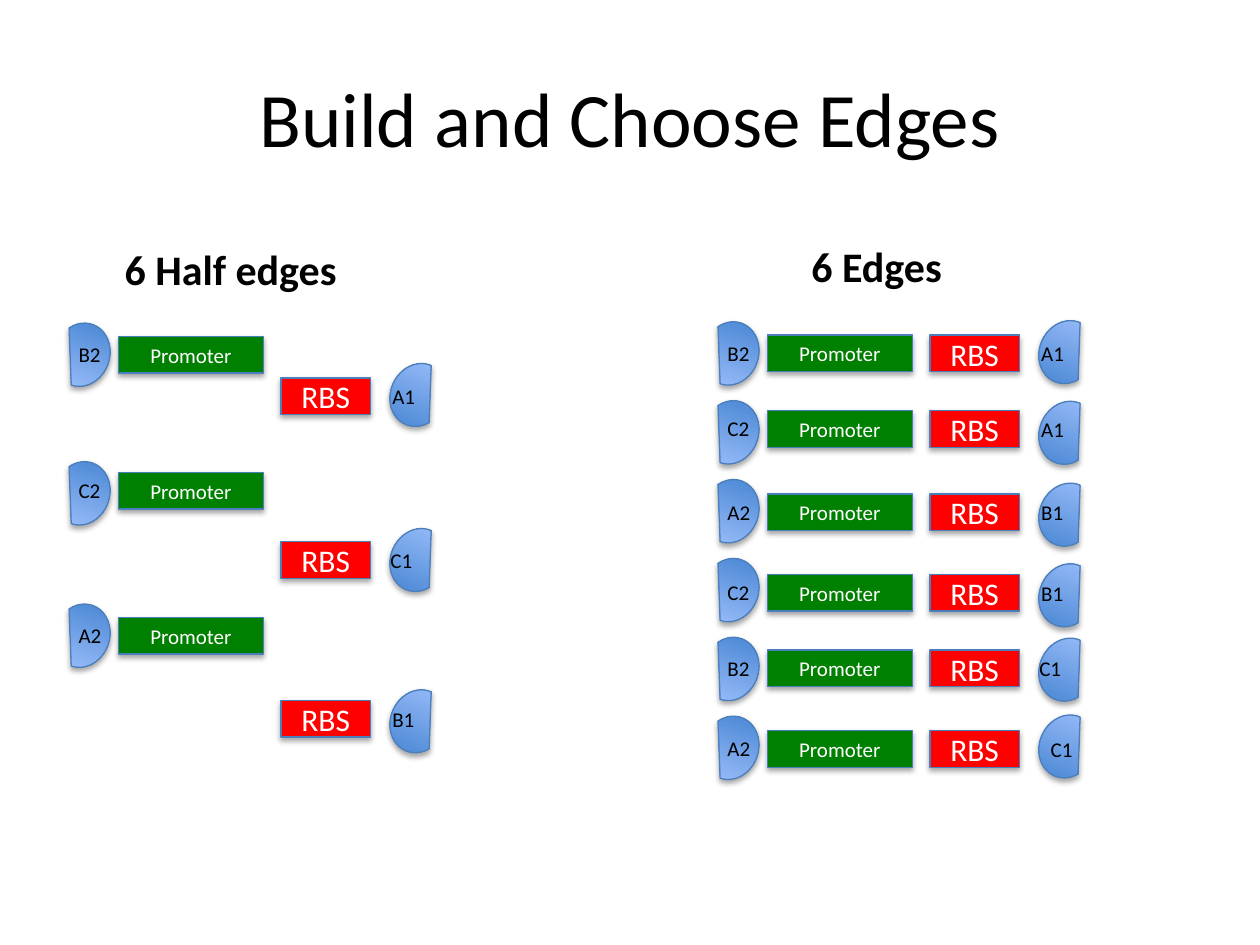
from dataclasses import dataclass

from lxml.etree import SubElement
from pptx import Presentation
from pptx.dml.color import RGBColor
from pptx.enum.shapes import MSO_SHAPE
from pptx.enum.text import MSO_ANCHOR, PP_ALIGN
from pptx.oxml.ns import qn
from pptx.util import Inches, Pt

# Grid: 100 columns by 75 rows; all positions and sizes are in these cells
SLIDE_W, SLIDE_H = Inches(10), Inches(7.5)
COL, ROW = SLIDE_W / 100, SLIDE_H / 75


@dataclass(frozen=True)
class Theme:
    font: str = "Calibri"
    text: str = "000000"
    on_fill: str = "FFFFFF"
    promoter: str = "008000"
    rbs: str = "FF0000"
    outline: str = "4B7EBC"
    gradient: tuple = ("3F80CE", "A4C4FF")
    title_size: int = 44
    heading_size: int = 24
    rbs_size: int = 18
    label_size: int = 12


THEME = Theme()

# Columns measured from the left end of an edge
LEFT_END, LEFT_LABEL, PROMOTER = 0, 0.95, 5.1
RBS, RIGHT_LABEL, RIGHT_END = 18, 25.85, 26.7
END_W, END_H, BOX_H, LABEL_H = 4.4, 5.1, 2.9, 3

HALVES_X, EDGES_X = 4.3, 55.8
FIRST_END, END_PITCH = 25.5, 6.26

# Left label, right label, box row, right end row, shift of right label
EDGES = [
    ("B2", "A1", 26.6, 25.4, 0),
    ("C2", "A1", 32.6, 31.8, 0),
    ("A2", "B1", 39.2, 38.3, 0),
    ("C2", "B1", 45.6, 44.7, 0),
    ("B2", "C1", 51.6, 50.6, -0.15),
    ("A2", "C1", 58, 56.7, 0.75),
]
# Label, box row, end row
LEFT_HALVES = [("B2", 26.7, 25.6), ("C2", 37.5, 36.6), ("A2", 49, 47.9)]
# Label, box row, end row, shift of label
RIGHT_HALVES = [("A1", 30, 28.8, 0), ("C1", 43, 41.9, -0.15),
                ("B1", 55.6, 54.7, 0)]


def cells(x, y, w, h):
    return [round(v) for v in (x * COL, y * ROW, w * COL, h * ROW)]


def apply_format(obj, values):
    for name, value in values.items():
        setattr(obj, name, value)


def write(sp, text, size, color, align=PP_ALIGN.LEFT,
          anchor=MSO_ANCHOR.TOP, bold=False):
    tf = sp.text_frame
    apply_format(tf, {"word_wrap": True, "vertical_anchor": anchor})
    p = tf.paragraphs[0]
    p.alignment = align
    r = p.add_run()
    r.text = text
    apply_format(r.font, {"name": THEME.font, "size": Pt(size), "bold": bold})
    r.font.color.rgb = RGBColor.from_string(color)


def add_text(shapes, box, text, size, **layout):
    write(shapes.add_textbox(*cells(*box)), text, size, THEME.text, **layout)


def add_part(shapes, kind, box):
    """Outlined shape with a soft shadow below it."""
    sp = shapes.add_shape(kind, *cells(*box))
    sp.line.color.rgb = RGBColor.from_string(THEME.outline)
    sp.line.width = Pt(0.75)
    sp.shadow.inherit = False
    shadow = SubElement(
        sp._element.spPr.find(qn("a:effectLst")), qn("a:outerShdw"),
        blurRad=str(Pt(3.15)), dist=str(Pt(1.81)), dir="5400000",
        rotWithShape="0")
    black = SubElement(shadow, qn("a:srgbClr"), val="000000")
    SubElement(black, qn("a:alpha"), val="35000")
    return sp


def add_box(shapes, x, y, w, text, size, color):
    sp = add_part(shapes, MSO_SHAPE.RECTANGLE, (x, y, w, BOX_H))
    sp.fill.solid()
    sp.fill.fore_color.rgb = RGBColor.from_string(color)
    write(sp, text, size, THEME.on_fill, PP_ALIGN.CENTER, MSO_ANCHOR.MIDDLE)


def add_end(shapes, x, y, rotation):
    sp = add_part(shapes, MSO_SHAPE.CHORD, (x, y, END_W, END_H))
    sp.rotation = rotation
    sp.fill.gradient()
    sp.fill.gradient_angle = 90
    for stop, color in zip(sp.fill.gradient_stops, THEME.gradient):
        stop.color.rgb = RGBColor.from_string(color)


def add_left_half(shapes, x, label, box_y, end_y):
    add_end(shapes, x + LEFT_END, end_y, 199.4)
    add_box(shapes, x + PROMOTER, box_y, 11.5, "Promoter",
            THEME.label_size, THEME.promoter)
    add_text(shapes, (x + LEFT_LABEL, box_y - 0.08, 5.8, LABEL_H),
             label, THEME.label_size)


def add_right_half(shapes, x, label, box_y, end_y, shift):
    add_end(shapes, x + RIGHT_END, end_y, 23.6)
    add_box(shapes, x + RBS, box_y, 7.1, "RBS", THEME.rbs_size, THEME.rbs)
    add_text(shapes, (x + RIGHT_LABEL + shift, box_y - 0.05, 5.2, LABEL_H),
             label, THEME.label_size)


def main():
    prs = Presentation()
    prs.slide_width, prs.slide_height = SLIDE_W, SLIDE_H
    s = prs.slides.add_slide(prs.slide_layouts[6])

    # Title and headings
    add_text(s.shapes, (5, 3, 90, 12.5), "Build and Choose Edges",
             THEME.title_size, align=PP_ALIGN.CENTER, anchor=MSO_ANCHOR.MIDDLE)
    for box, heading in (((63.4, 16.6, 25.5, 7), "6 Edges"),
                         ((8.9, 16.8, 26.5, 7), "6 Half edges")):
        add_text(s.shapes, box, heading, THEME.heading_size,
                 anchor=MSO_ANCHOR.BOTTOM, bold=True)

    # Complete edges: a left and a right half in each row
    edges = s.shapes.add_group_shape().shapes
    for i, (left, right, box_y, end_y, shift) in enumerate(EDGES):
        add_left_half(edges, EDGES_X, left, box_y, FIRST_END + i * END_PITCH)
        add_right_half(edges, EDGES_X, right, box_y, end_y, shift)

    # Half edges, one group each
    for add_half, halves in ((add_left_half, LEFT_HALVES),
                             (add_right_half, RIGHT_HALVES)):
        for half in halves:
            add_half(s.shapes.add_group_shape().shapes, HALVES_X, *half)

    prs.save("out.pptx")


if __name__ == "__main__":
    main()
